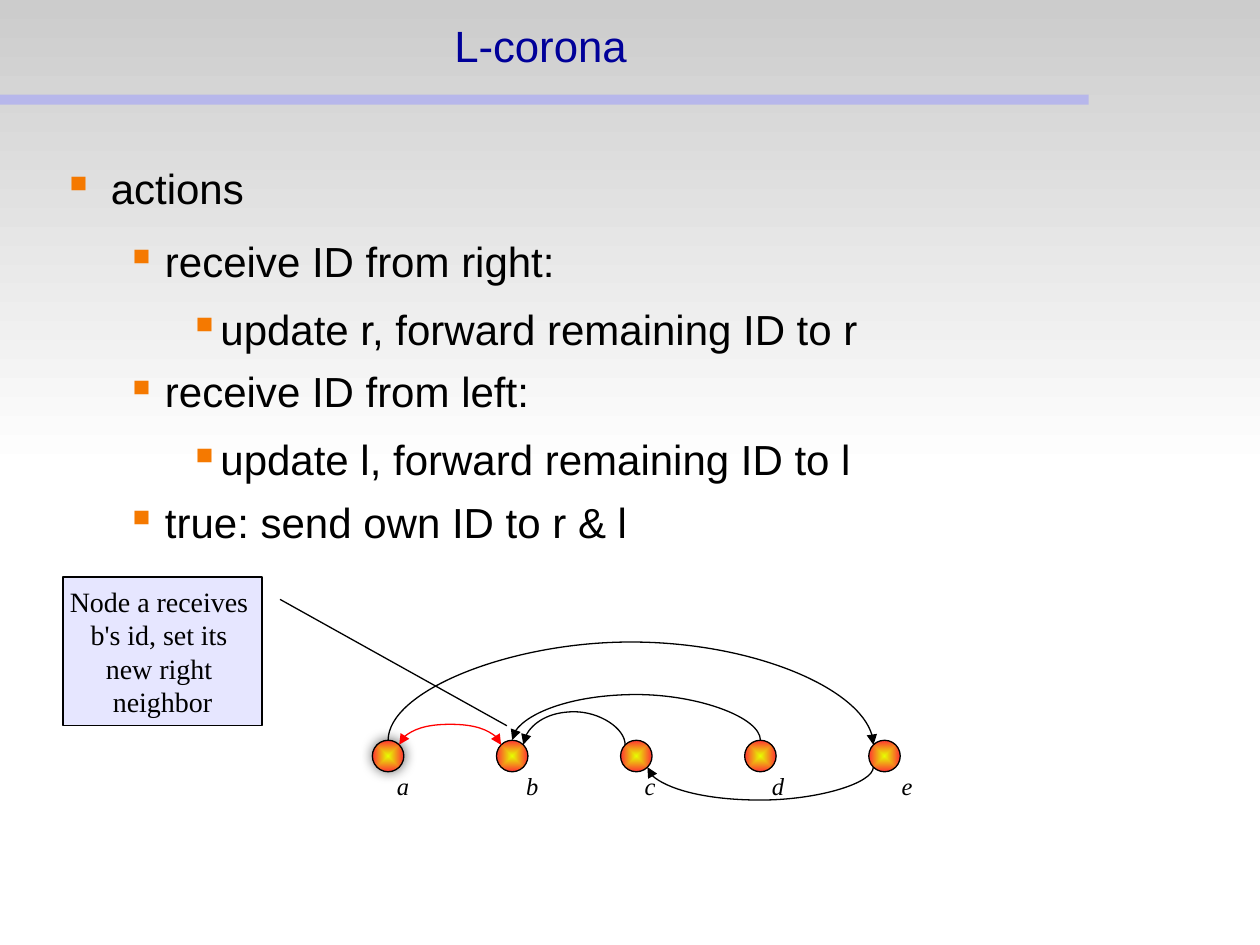
from dataclasses import dataclass
from math import cos, radians, sin

from lxml import etree
from pptx import Presentation
from pptx.dml.color import RGBColor
from pptx.enum.shapes import MSO_CONNECTOR, MSO_SHAPE
from pptx.enum.text import MSO_ANCHOR, PP_ALIGN
from pptx.oxml import parse_xml
from pptx.oxml.ns import qn
from pptx.util import Emu, Inches, Pt

RECTANGLE, OVAL = MSO_SHAPE.RECTANGLE, MSO_SHAPE.OVAL
CALLOUT, CURVE = MSO_SHAPE.LINE_CALLOUT_1, MSO_CONNECTOR.CURVE
MIDDLE, TOP = MSO_ANCHOR.MIDDLE, MSO_ANCHOR.TOP
CENTER, LEFT = PP_ALIGN.CENTER, PP_ALIGN.LEFT
DRAWING = 'xmlns:a="http://schemas.openxmlformats.org/drawingml/2006/main"'
WIDTH, HEIGHT = 10, 7.5
SANS, SERIF = "Arial", "Times New Roman"
BLACK, RED, ORANGE = "000000", "FF0000", "F57900"
FIRST_X, LAST_X, NODE_Y, NODE_SIZE = 3.08, 7.02, 6, 0.25
INDENTS = [(0.38, 0.38, 14.2), (0.81, 0.31, 11.4), (1.25, 0.25, 8.5)]
LINEAR = '<a:lin ang="5400000" scaled="0"/>'
RADIAL = '<a:path path="shape"><a:fillToRect l="50000" t="50000" r="50000" b="50000"/></a:path>'
HALO = ('<a:outerShdw blurRad="91440" dist="0" algn="ctr" rotWithShape="0">'
        '<a:srgbClr val="000000"><a:alpha val="60000"/></a:srgbClr></a:outerShdw>')


@dataclass
class Node:
    """A peer on the line, with its label's shift to the right of its centre."""
    name: str
    label_shift: float


@dataclass
class Arch:
    """A curved link between two rim points, given as node index and angle."""
    start: tuple[int, int]
    end: tuple[int, int]
    rise: float
    colour: str = BLACK
    both: bool = False


NODES = [Node("a", 0.12), Node("b", 0.16), Node("c", 0.11), Node("d", 0.14), Node("e", 0.18)]
ARCHES = [
    Arch((4, -135), (2, -45), -0.29),
    Arch((3, 90), (1, 90), 0.4),
    Arch((2, 135), (1, 45), 0.29),
    Arch((1, 135), (0, 45), 0.18, RED, True),
    Arch((0, 90), (4, 135), 0.78),
]
ACTIONS = [
    (0, "actions"),
    (1, "receive ID from right:"),
    (2, "update r, forward remaining ID to r"),
    (1, "receive ID from left:"),
    (2, "update l, forward remaining ID to l"),
    (1, "true: send own ID to r & l"),
]
NOTE = ["Node a receives ", "b's id, set its ", "new right ", "neighbor"]


def rgb(value: str) -> RGBColor:
    """Turn a hex string into a colour."""
    return RGBColor.from_string(value)


def node_x(index: int) -> float:
    """Return the horizontal centre of a node."""
    return FIRST_X + index * (LAST_X - FIRST_X) / (len(NODES) - 1)


def rim(index: int, angle: int) -> tuple[float, float]:
    """Return the point on a node's rim at an angle, counted anticlockwise."""
    turn, radius = radians(angle), NODE_SIZE / 2
    return node_x(index) + radius * cos(turn), NODE_Y - radius * sin(turn)


def add_block(page, kind, left: float, top: float, width: float, height: float, fill: str = "", line: str = ""):
    """Add a preset shape with an optional solid fill and thin outline."""
    shape = page.shapes.add_shape(kind, Inches(left), Inches(top), Inches(width), Inches(height))
    shape.shadow.inherit = False
    if fill:
        shape.fill.solid()
        shape.fill.fore_color.rgb = rgb(fill)
    if line:
        shape.line.color.rgb = rgb(line)
        shape.line.width = Pt(0.75)
    else:
        shape.line.fill.background()
    return shape


def set_gradient(shape, first: str, last: str, direction: str) -> None:
    """Fill a shape with a two-colour gradient."""
    stops = "".join(f'<a:gs pos="{place}"><a:srgbClr val="{colour}"/></a:gs>'
                    for place, colour in ((0, first), (100000, last)))
    shape.fill.gradient()
    old = shape.element.spPr.find(qn("a:gradFill"))
    new = parse_xml(f'<a:gradFill {DRAWING} rotWithShape="1"><a:gsLst>{stops}</a:gsLst>{direction}</a:gradFill>')
    old.getparent().replace(old, new)


def set_frame(frame, margins: tuple[float, float, float, float], anchor, wrap: bool) -> None:
    """Set a text frame's margins, anchor and wrapping."""
    frame.margin_left, frame.margin_top, frame.margin_right, frame.margin_bottom = map(Inches, margins)
    frame.vertical_anchor = anchor
    frame.word_wrap = wrap


def add_span(para, text: str, font: str, size: float, colour: str = BLACK, italic: bool = False) -> None:
    """Add one formatted run to a paragraph."""
    span = para.add_run()
    span.text = text
    span.font.name, span.font.size, span.font.italic = font, Pt(size), italic
    span.font.color.rgb = rgb(colour)


def draw_backdrop(page) -> None:
    """Draw the shaded upper half and the translucent rule under the title."""
    shade = add_block(page, RECTANGLE, 0, 0, WIDTH, HEIGHT / 2)
    set_gradient(shade, "CCCCCC", "FFFFFF", LINEAR)
    rule = add_block(page, RECTANGLE, 0, HEIGHT / 10, 8.64, 0.08, "9999FF")
    colour = rule.element.spPr.find(qn("a:solidFill"))[0]
    etree.SubElement(colour, qn("a:alpha"), val="50000")


def draw_title(page) -> None:
    """Place and format the title above the backdrop."""
    title = page.shapes.title
    title.element.getparent().append(title.element)
    title.left, title.top, title.width, title.height = map(Inches, (0, 0, 8.58, HEIGHT / 10))
    set_frame(title.text_frame, (0, 0, 0, 0), MIDDLE, True)
    para = title.text_frame.paragraphs[0]
    para.alignment, para.line_spacing = CENTER, 0.98
    add_span(para, "L-corona", SANS, 25, "000099")


def draw_actions(page) -> None:
    """Write the bulleted list of actions."""
    box = page.shapes.add_textbox(Inches(0.5), Inches(1.3), Inches(9), Inches(4.95))
    frame = box.text_frame
    set_frame(frame, (0, 0.02, 0, 0), TOP, True)
    for index, (level, text) in enumerate(ACTIONS):
        para = frame.add_paragraph() if index else frame.paragraphs[0]
        margin, hanging, after = INDENTS[level]
        props = para._p.get_or_add_pPr()
        props.set("marL", str(Inches(margin)))
        props.set("indent", str(-Inches(hanging)))
        props.append(parse_xml(f'<a:buClr {DRAWING}><a:srgbClr val="{ORANGE}"/></a:buClr>'))
        props.append(parse_xml(f'<a:buChar {DRAWING} char="▪"/>'))
        para.level, para.alignment = level, LEFT
        para.line_spacing, para.space_after = 0.95, Pt(after)
        add_span(para, text, SANS, 24)


def draw_note(page) -> None:
    """Draw the callout that explains the red link."""
    note = add_block(page, CALLOUT, 0.5, 4.58, 1.58, 1.18, "E6E6FF", BLACK)
    for index, share in enumerate((0.15, 1.09, 1, 2.23)):
        note.adjustments[index] = share
    set_frame(note.text_frame, (0.1, 0.05, 0.1, 0.05), MIDDLE, False)
    para = note.text_frame.paragraphs[0]
    para.alignment = CENTER
    for index, text in enumerate(NOTE):
        if index:
            para.add_line_break()
        add_span(para, text, SERIF, 16)


def draw_node(page, index: int, node: Node) -> None:
    """Draw a node and its label, with a halo round the first."""
    half = NODE_SIZE / 2
    disc = add_block(page, OVAL, node_x(index) - half, NODE_Y - half, NODE_SIZE, NODE_SIZE, line=BLACK)
    set_gradient(disc, "E6FF00", "FF3333", RADIAL)
    if index == 0:
        disc.element.spPr.find(qn("a:effectLst")).append(parse_xml(HALO.replace(" ", f" {DRAWING} ", 1)))
    left = node_x(index) + node.label_shift - 0.15
    label = page.shapes.add_textbox(Inches(left), Inches(6.07), Inches(0.3), Inches(0.34))
    set_frame(label.text_frame, (0.1, 0.05, 0.1, 0.05), TOP, False)
    para = label.text_frame.paragraphs[0]
    para.alignment = CENTER
    add_span(para, node.name, SERIF, 14, italic=True)


def draw_arch(page, arch: Arch) -> None:
    """Draw a curved connector turned a quarter so that it bulges up or down."""
    (x1, y1), (x2, y2) = rim(*arch.start), rim(*arch.end)
    upward = arch.rise > 0
    link = page.shapes.add_connector(CURVE, 0, 0, 0, 0)
    link.width, link.height = max(Inches(abs(y2 - y1)), Emu(1588)), Inches(abs(x2 - x1))
    link.left = Inches((x1 + x2) / 2) - link.width // 2
    link.top = Inches((y1 + y2) / 2) - link.height // 2
    link.rotation = 270 if upward else 90
    frame = link.element.spPr.find(qn("a:xfrm"))
    frame.set("rot", str((270 if upward else 90) * 60000))
    against = abs(y2 - y1) > 0.01 and (y2 > y1) == upward
    frame.set("flipH", str(int(against)))
    frame.set("flipV", str(int((x2 < x1) == upward)))
    bend = round(Inches(abs(arch.rise)) / link.width * 100000) * (-1 if against else 1)
    guides = link.element.spPr.find(qn("a:prstGeom")).find(qn("a:avLst"))
    etree.SubElement(guides, qn("a:gd"), name="adj1", fmla=f"val {bend}")
    link.line.color.rgb, link.line.width = rgb(arch.colour), Pt(0.75)
    outline = link.element.spPr.find(qn("a:ln"))
    for end in ("headEnd", "tailEnd") if arch.both else ("tailEnd",):
        etree.SubElement(outline, qn(f"a:{end}"), type="triangle")
    etree.SubElement(link.element.spPr, qn("a:effectLst"))


def main() -> None:
    """Build the slide and save it."""
    deck = Presentation()
    deck.slide_width, deck.slide_height = Inches(WIDTH), Inches(HEIGHT)
    page = deck.slides.add_slide(deck.slide_layouts[5])
    draw_backdrop(page)
    draw_title(page)
    draw_note(page)
    for index, node in enumerate(NODES):
        draw_node(page, index, node)
    for arch in ARCHES:
        draw_arch(page, arch)
    draw_actions(page)
    deck.save("out.pptx")


if __name__ == "__main__":
    main()
